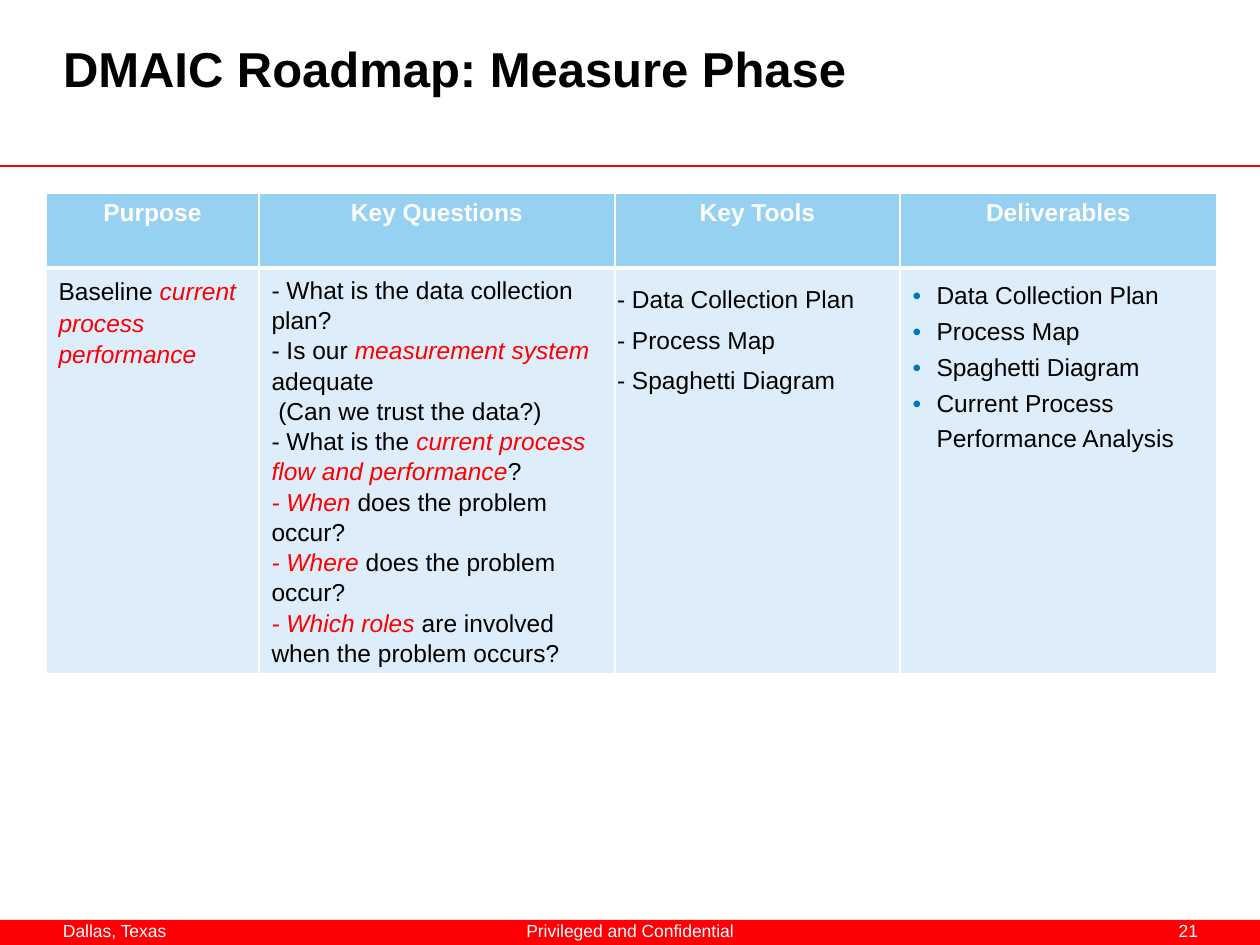
from dataclasses import dataclass

from lxml.etree import SubElement
from pptx import Presentation
from pptx.dml.color import RGBColor
from pptx.enum.shapes import MSO_CONNECTOR, MSO_SHAPE
from pptx.enum.text import MSO_ANCHOR, PP_ALIGN
from pptx.oxml.ns import qn
from pptx.util import Emu, Pt

BLACK, WHITE, RED, EMPHASIS = "000000", "FFFFFF", "FC0006", "FF0000"
HEADER_BLUE, BODY_BLUE, BULLET_BLUE = "96D1F2", "DDEEFA", "0076BE"


def px(length: int) -> Emu:
    return Emu(round(length * 914400 / 126))


def rgb(value: str) -> RGBColor:
    return RGBColor.from_string(value)


@dataclass
class TextStyle:
    size: int = 14
    color: str = BLACK
    bold: bool = False
    align: PP_ALIGN = PP_ALIGN.LEFT
    spacing: float = 1.0
    gap: float = 0
    emphasis: str = EMPHASIS
    bullet: bool = False


@dataclass
class Column:
    heading: str
    width: int
    lines: list[str]
    style: TextStyle


@dataclass
class Label:
    text: str
    left: int
    width: int
    align: PP_ALIGN


COLUMNS = [
    Column("Purpose", 213, ["Baseline *current process performance*"],
           TextStyle(spacing=1.15, emphasis=RED)),
    Column("Key Questions", 356, [
        "- What is the data collection plan?",
        "- Is our *measurement system* adequate",
        " (Can we trust the data?)",
        "- What is the *current process flow and performance*?",
        "*- When* does the problem occur?",
        "*- Where* does the problem occur?",
        "*- Which roles* are involved when the problem occurs?",
    ], TextStyle(spacing=1.1)),
    Column("Key Tools", 285, [], TextStyle()),
    Column("Deliverables", 317, [
        "Data Collection Plan", "Process Map", "Spaghetti Diagram",
        "Current Process Performance Analysis",
    ], TextStyle(spacing=1.3, bullet=True)),
]
KEY_TOOLS = ["- Data Collection Plan", "- Process Map", "- Spaghetti Diagram"]
FOOTER = [
    Label("Dallas, Texas", 63, 150, PP_ALIGN.LEFT),
    Label("Privileged and Confidential", 480, 300, PP_ALIGN.CENTER),
    Label("21", 1091, 107, PP_ALIGN.RIGHT),
]


def add_bullet(paragraph) -> None:
    properties = paragraph._p.get_or_add_pPr()
    properties.set("marL", str(px(24)))
    properties.set("indent", str(-px(24)))
    color = SubElement(properties, qn("a:buClr"))
    SubElement(color, qn("a:srgbClr"), val=BULLET_BLUE)
    SubElement(properties, qn("a:buFont"), typeface="Arial")
    SubElement(properties, qn("a:buChar"), char="•")


def write(frame, lines: list[str], style: TextStyle) -> None:
    """Fill a text frame; the parts between asterisks are emphasised."""
    for index, line in enumerate(lines):
        paragraph = frame.add_paragraph() if index else frame.paragraphs[0]
        layout = {"alignment": style.align, "line_spacing": style.spacing,
                  "space_before": Pt(style.gap if index else 0)}
        for name, value in layout.items():
            setattr(paragraph, name, value)
        if style.bullet:
            add_bullet(paragraph)
        for part, words in enumerate(line.split("*")):
            if not words:
                continue
            emphasised = part % 2 == 1
            run = paragraph.add_run()
            run.text = words
            font = {"name": "Arial", "size": Pt(style.size),
                    "bold": style.bold, "italic": emphasised}
            for name, value in font.items():
                setattr(run.font, name, value)
            run.font.color.rgb = rgb(style.emphasis if emphasised else style.color)


def set_frame(frame, across: int = 0, down: int = 0) -> None:
    settings = {"word_wrap": True, "vertical_anchor": MSO_ANCHOR.TOP,
                "margin_left": px(across), "margin_right": px(across),
                "margin_top": px(down), "margin_bottom": px(down)}
    for name, value in settings.items():
        setattr(frame, name, value)


def add_text(slide, box: tuple[int, int, int, int], lines: list[str],
             style: TextStyle, across: int = 0, down: int = 0) -> None:
    frame = slide.shapes.add_textbox(*map(px, box)).text_frame
    set_frame(frame, across, down)
    write(frame, lines, style)


def fill_cell(cell, fill: str, borders: dict[str, int]) -> None:
    properties = cell._tc.get_or_add_tcPr()
    for side, width in borders.items():
        border = SubElement(properties, qn(f"a:ln{side}"), w=str(Pt(width)))
        solid = SubElement(border, qn("a:solidFill"))
        SubElement(solid, qn("a:srgbClr"), val=WHITE)
    cell.fill.solid()
    cell.fill.fore_color.rgb = rgb(fill)


def add_roadmap(slide) -> None:
    width = sum(column.width for column in COLUMNS)
    table = slide.shapes.add_table(
        2, len(COLUMNS), px(46), px(193), px(width), px(480)).table
    for row, height in zip(table.rows, (75, 405)):
        row.height = px(height)
    heading_style = TextStyle(color=WHITE, bold=True, align=PP_ALIGN.CENTER)
    for index, column in enumerate(COLUMNS):
        table.columns[index].width = px(column.width)
        heading, body = table.cell(0, index), table.cell(1, index)
        fill_cell(heading, HEADER_BLUE, {"L": 1, "R": 1, "T": 1, "B": 3})
        fill_cell(body, BODY_BLUE, {"L": 1, "R": 1, "T": 3, "B": 1})
        write(heading.text_frame, [column.heading], heading_style)
        write(body.text_frame, column.lines, column.style)


def add_footer(slide) -> None:
    band = slide.shapes.add_shape(
        MSO_SHAPE.RECTANGLE, px(0), px(920), px(1260), px(25))
    band.shadow.inherit = False
    band.fill.solid()
    band.fill.fore_color.rgb = rgb(RED)
    band.line.fill.background()
    for label in FOOTER:
        add_text(slide, (label.left, 920, label.width, 25), [label.text],
                 TextStyle(size=10, color=WHITE, align=label.align))


def add_title(slide) -> None:
    title = slide.shapes.title
    place = {"left": 63, "top": 38, "width": 1134, "height": 129}
    for name, value in place.items():
        setattr(title, name, px(value))
    set_frame(title.text_frame)
    write(title.text_frame, ["DMAIC Roadmap: Measure Phase"],
          TextStyle(size=28, bold=True))
    rule = slide.shapes.add_connector(
        MSO_CONNECTOR.STRAIGHT, px(0), px(166), px(1260), px(166))
    rule.line.color.rgb = rgb(RED)
    rule.line.width = Pt(1)
    SubElement(rule._element.spPr, qn("a:effectLst"))


def main() -> None:
    deck = Presentation()
    deck.slide_width, deck.slide_height = px(1260), px(945)
    slide = deck.slides.add_slide(deck.slide_layouts[5])
    add_title(slide)
    add_roadmap(slide)
    add_text(slide, (609, 271, 282, 123), KEY_TOOLS,
             TextStyle(spacing=1.3, gap=1.5), across=8, down=4)
    add_footer(slide)
    deck.save("out.pptx")


if __name__ == "__main__":
    main()
